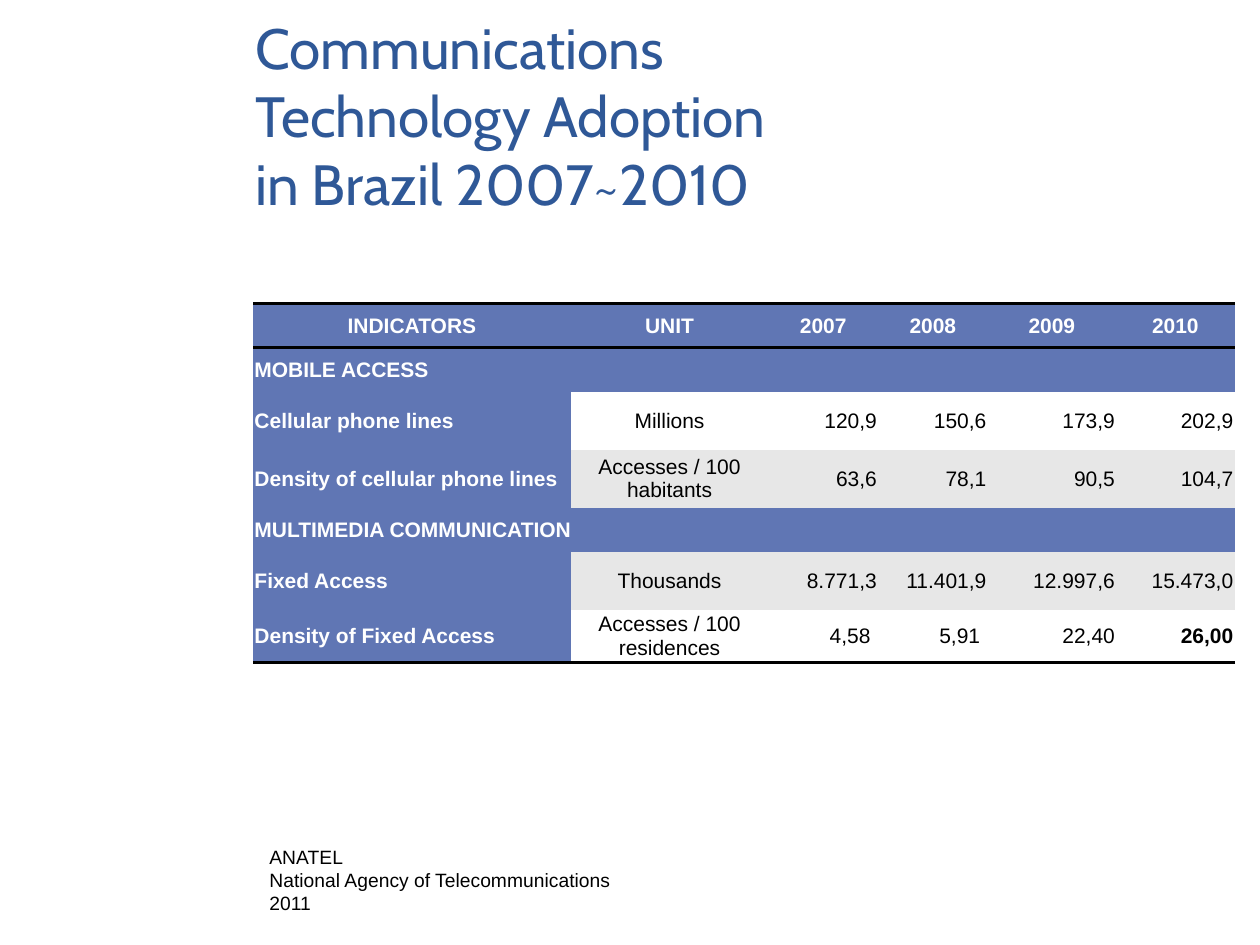
from lxml import etree
from pptx import Presentation
from pptx.dml.color import RGBColor
from pptx.enum.text import MSO_ANCHOR as ANCHOR, PP_ALIGN as ALIGN
from pptx.oxml.ns import qn
from pptx.util import Inches, Pt

COLORS = {"title": "2F5897", "blue": "6076B4", "gray": "E7E7E7",
          "white": "FFFFFF", "black": "000000"}
NO_STYLE = "{2D5ABB26-0587-4C30-8999-92F81FD0307C}"


def add_run(p, text, size, color, font="Arial", bold=False):
    r = p.add_run()
    r.text = text
    r.font.name = font
    r.font.size = Pt(size)
    r.font.bold = bold
    r.font.color.rgb = RGBColor.from_string(COLORS[color])


def add_border(cell, side):
    """Draw a 2 pt black line on one side ("T" or "B"); call before filling."""
    ln = etree.SubElement(cell._tc.get_or_add_tcPr(), qn(f"a:ln{side}"), w=str(Pt(2)))
    fill = etree.SubElement(ln, qn("a:solidFill"))
    etree.SubElement(fill, qn("a:srgbClr"), val=COLORS["black"])


prs = Presentation()
prs.slide_width, prs.slide_height = Inches(10), Inches(7.5)
s = prs.slides.add_slide(prs.slide_layouts[6])

# Title
tf = s.shapes.add_textbox(Inches(1.93), Inches(0.05), Inches(5.64), Inches(1.73)).text_frame
tf.word_wrap = True
tf.vertical_anchor = ANCHOR.MIDDLE
p = tf.paragraphs[0]
add_run(p, "Communications Technology Adoption ", 32.4, "title", "Cabin")
p.add_line_break()
add_run(p, "in Brazil 2007~2010", 32.4, "title", "Cabin")

# Indicator table: each row is its body fill and its texts
rows = [
    ("blue", ["INDICATORS", "UNIT", "2007", "2008", "2009", "2010"]),
    ("blue", ["MOBILE ACCESS"]),
    ("white", ["Cellular phone lines", "Millions", "120,9", "150,6", "173,9", "202,9"]),
    ("gray", ["Density of cellular phone lines", "Accesses / 100 habitants",
              "63,6", "78,1", "90,5", "104,7"]),
    ("blue", ["MULTIMEDIA COMMUNICATION"]),
    ("gray", ["Fixed Access", "Thousands", "8.771,3", "11.401,9", "12.997,6", "15.473,0"]),
    ("white", ["Density of Fixed Access", "Accesses / 100 residences",
               "4,58", "5,91", "22,40", "26,00"]),
]
col_widths = [2.52, 1.57, 0.87, 0.87, 1.02, 0.94]
row_heights = [0.35, 0.35, 0.46, 0.46, 0.35, 0.46, 0.35]
last = len(rows) - 1

frame = s.shapes.add_table(len(rows), len(col_widths), Inches(2.01), Inches(2.41),
                           Inches(sum(col_widths)), Inches(sum(row_heights)))
table = frame.table
table.first_row = table.horz_banding = False
next(frame.element.iter(qn("a:tableStyleId"))).text = NO_STYLE
for col, width in zip(table.columns, col_widths):
    col.width = Inches(width)

for i, (body_fill, texts) in enumerate(rows):
    table.rows[i].height = Inches(row_heights[i])
    if len(texts) == 1:
        table.cell(i, 0).merge(table.cell(i, len(col_widths) - 1))
    for j, text in enumerate(texts):
        cell = table.cell(i, j)
        pad = Inches(0.02 if i == 0 else 0.01)
        cell.margin_left = cell.margin_right = cell.margin_top = cell.margin_bottom = pad
        if text in ("4,58", "5,91"):
            cell.margin_right = Inches(0.06)
        cell.vertical_anchor = ANCHOR.MIDDLE
        if i == 0:
            add_border(cell, "T")
        if i in (0, last):
            add_border(cell, "B")
        heading = i == 0 or j == 0
        cell.fill.solid()
        cell.fill.fore_color.rgb = RGBColor.from_string(
            COLORS["blue" if heading else body_fill])
        p = cell.text_frame.paragraphs[0]
        if i == 0 or j == 1:
            p.alignment = ALIGN.CENTER
        else:
            p.alignment = ALIGN.LEFT if j == 0 else ALIGN.RIGHT
        add_run(p, text, 12, "white" if heading else "black",
                bold=heading or text == "26,00")

# Source note
tf = s.shapes.add_textbox(Inches(2.04), Inches(6.66), Inches(2.96), Inches(0.66)).text_frame
tf.word_wrap = False
for i, line in enumerate(["ANATEL", "National Agency of Telecommunications", "2011"]):
    p = tf.add_paragraph() if i else tf.paragraphs[0]
    add_run(p, line, 11, "black")

prs.save("out.pptx")
